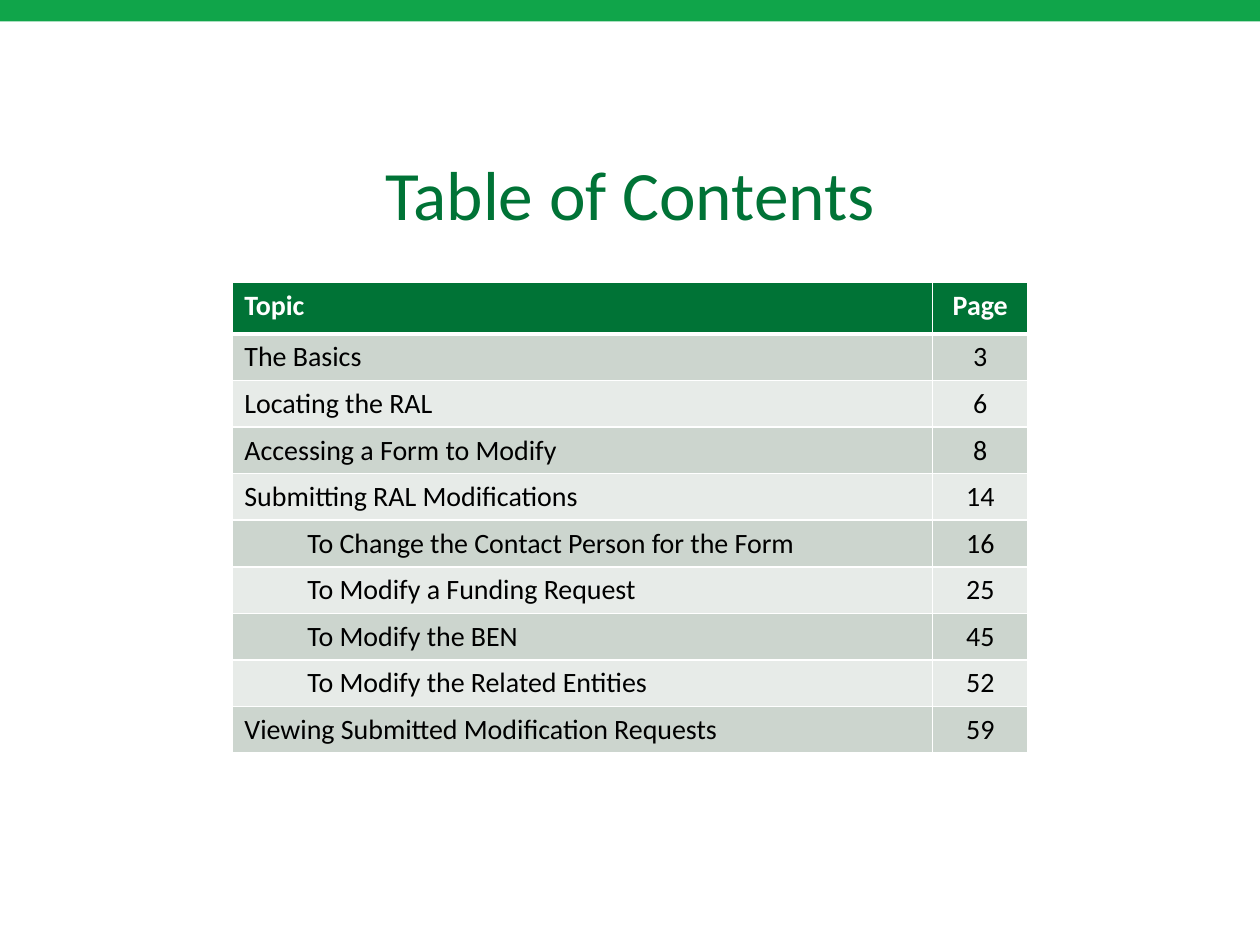
from lxml import etree
from pptx import Presentation
from pptx.dml.color import RGBColor
from pptx.enum.shapes import MSO_SHAPE
from pptx.enum.text import MSO_ANCHOR as ANCHOR, PP_ALIGN as ALIGN
from pptx.oxml.ns import qn
from pptx.util import Inches, Pt

GREEN, WHITE, BLACK = "007336", "FFFFFF", "000000"
BANDS = ["E7EBE8", "CCD5CE"]
TOPICS = [  # topic, page, indent level
    ("Topic", "Page", 0),
    ("The Basics", "3", 0),
    ("Locating the RAL", "6", 0),
    ("Accessing a Form to Modify", "8", 0),
    ("Submitting RAL Modifications", "14", 0),
    ("To Change the Contact Person for the Form", "16", 1),
    ("To Modify a Funding Request", "25", 1),
    ("To Modify the BEN", "45", 1),
    ("To Modify the Related Entities", "52", 1),
    ("Viewing Submitted Modification Requests", "59", 0),
]


def paint(fmt, color):
    """Give a fill or font a solid colour."""
    if hasattr(fmt, "solid"):
        fmt.solid()
        fmt.fore_color.rgb = RGBColor.from_string(color)
    else:
        fmt.color.rgb = RGBColor.from_string(color)


def write(tf, text, color, align, **fmt):
    p = tf.paragraphs[0]
    p.alignment = align
    r = p.add_run()
    r.text = text
    for name, value in {"name": "Calibri", **fmt}.items():
        setattr(r.font, name, value)
    paint(r.font, color)
    return p


prs = Presentation()
prs.slide_width, prs.slide_height = Inches(10), Inches(7.5)
s = prs.slides.add_slide(prs.slide_layouts[6])

# Top bar
bar = s.shapes.add_shape(MSO_SHAPE.RECTANGLE, 0, 0, Inches(10), Inches(0.17))
bar.shadow.inherit = False
bar.line.fill.background()
paint(bar.fill, "10A54A")

# Title
title = s.shapes.add_textbox(Inches(0.75), Inches(1.24), Inches(8.5), Inches(0.58))
tf = title.text_frame
tf.word_wrap = True
tf.vertical_anchor = ANCHOR.MIDDLE
write(tf, "Table of Contents", GREEN, ALIGN.CENTER, size=Pt(39.6))

# Contents table
table = s.shapes.add_table(len(TOPICS), 2, Inches(1.84), Inches(2.24),
                           Inches(6.32), Inches(3.74)).table
for col, width in zip(table.columns, (5.56, 0.76)):
    col.width = Inches(width)

for i, (topic, page, level) in enumerate(TOPICS):
    header = i == 0
    table.rows[i].height = Inches(0.41 if header else 0.37)
    for j, text in enumerate((topic, page)):
        cell = table.cell(i, j)
        cell.vertical_anchor = ANCHOR.TOP if header else ANCHOR.MIDDLE
        tcPr = cell._tc.get_or_add_tcPr()
        for side in "LRTB":
            heavy = (i, side) in ((0, "B"), (1, "T"))
            ln = etree.SubElement(tcPr, qn(f"a:ln{side}"), w=str(Pt(3 if heavy else 1)))
            fill = etree.SubElement(ln, qn("a:solidFill"))
            etree.SubElement(fill, qn("a:srgbClr"), val=WHITE)
        paint(cell.fill, GREEN if header else BANDS[i % 2])
        p = write(cell.text_frame, text, WHITE if header else BLACK,
                  ALIGN.CENTER if j else ALIGN.LEFT, size=Pt(16), bold=header)
        if level and j == 0:
            p.level = level
            pPr = p._p.get_or_add_pPr()
            pPr.set("marL", str(Inches(0.5)))
            pPr.set("indent", "0")

prs.save("out.pptx")
